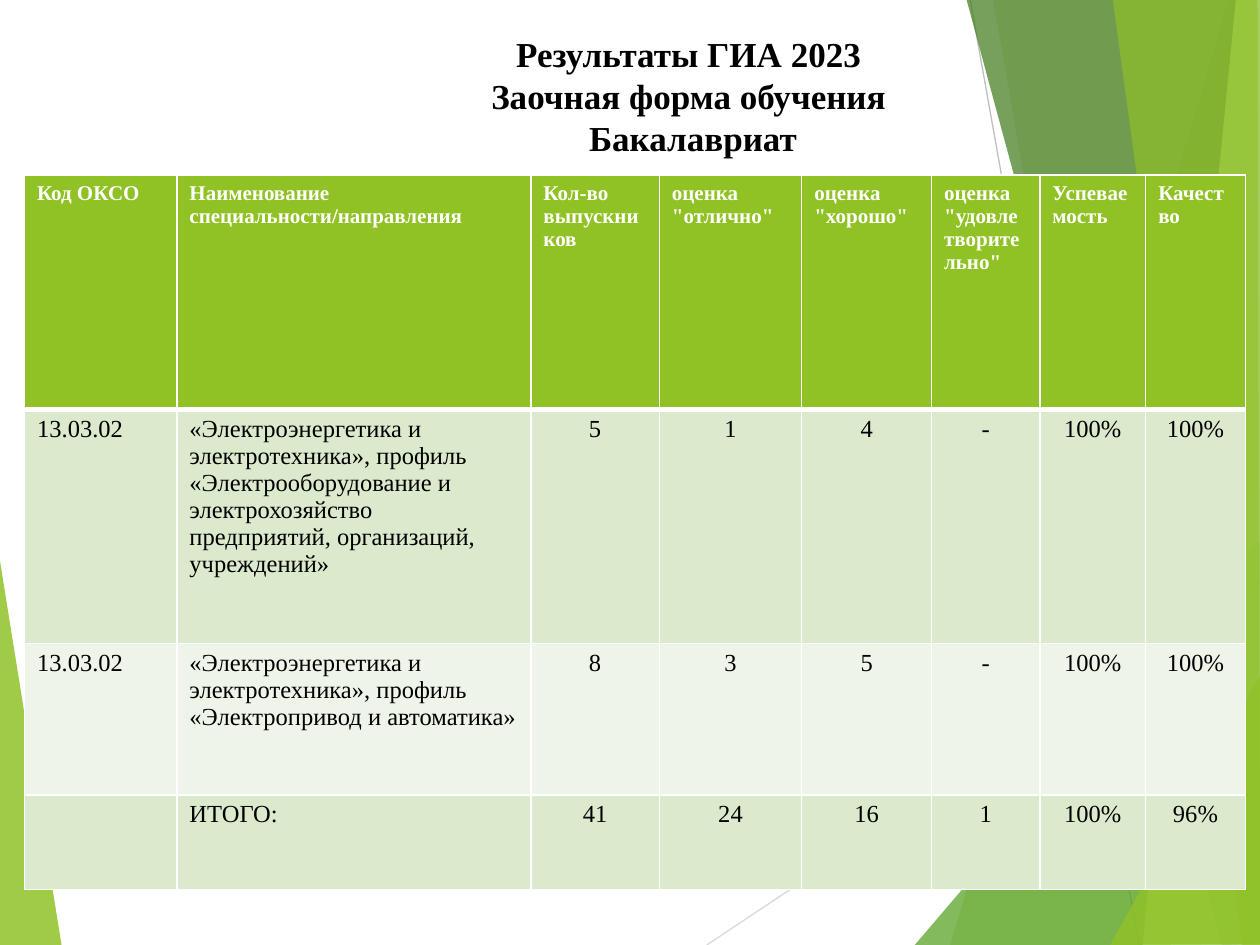
from lxml import etree
from pptx import Presentation, util as u
from pptx.dml.color import RGBColor
from pptx.enum import shapes, text
from pptx.oxml import ns

FONT = "Times New Roman"
GREEN = "90C226"
FACETS = [
    ([(-0.7, 316), (35.3, 540.7), (-0.7, 540)], GREEN, 85),
    ([(702, 0), (543, 540), (721.4, 540.7), (720.7, 0.7)], GREEN, 30),
    ([(567.4, -0.7), (661.7, 540), (720.7, 540), (720.7, -0.7)], GREEN, 20),
    ([(522.7, 540), (720, 308.9), (720.7, 540)], "54A021", 72),
    ([(552.2, -0.7), (698.4, 540), (720.7, 539.3), (720.7, -0.7)], "3F7819", 70),
    ([(706.3, -0.7), (653, 540), (720.7, 540), (720, -0.7)], "C0E474", 70),
    ([(635.8, -0.7), (709.9, 540), (720, 540), (718.6, -0.7)], GREEN, 65),
    ([(634.3, 540), (720.7, 385.2), (720.7, 539.3)], GREEN, 80),
]
RAYS = [((403.9, 540), (720.7, 329), "D9D9D9"), ((554.4, 0), (650.9, 540), "BFBFBF")]
COLUMNS = [87.1, 202.3, 73.4, 81.4, 74.2, 61.9, 60.5, 56.9]
ROWS = [133.9, 133.9, 86.4, 54]
ROW_FILLS = [GREEN, "DBE9CD", "EEF4E8", "DBE9CD"]
RESULTS = [
    ["Код ОКСО", "Наименование специальности/направления", "Кол-во выпускников",
     'оценка "отлично"', 'оценка "хорошо"', 'оценка "удовлетворительно"',
     "Успеваемость", "Качество"],
    ["13.03.02", "«Электроэнергетика и электротехника», профиль «Электрооборудование "
     "и электрохозяйство предприятий, организаций, учреждений»",
     "5", "1", "4", "-", "100%", "100%"],
    ["13.03.02", "«Электроэнергетика и электротехника», профиль «Электропривод и автоматика»",
     "8", "3", "5", "-", "100%", "100%"],
    ["", "ИТОГО:", "41", "24", "16", "1", "100%", "96%"],
]


def rgb(value):
    return RGBColor.from_string(value)


def write(frame, content, size=14, color="000000", bold=False, align=text.PP_ALIGN.LEFT):
    para = frame.paragraphs[0]
    para.text = content
    para.alignment = align
    for font in [para.font] + [span.font for span in para.runs]:
        font.name = FONT
        font.size = u.Pt(size)
        font.bold = bold
        font.color.rgb = rgb(color)


def add_facet(page, points, color, opacity):
    corners = [(u.Pt(x), u.Pt(y)) for x, y in points]
    builder = page.shapes.build_freeform(*corners[0])
    builder.add_line_segments(corners[1:], close=True)
    shape = builder.convert_to_shape()
    shape.shadow.inherit = False
    shape.line.fill.background()
    shape.fill.solid()
    shape.fill.fore_color.rgb = rgb(color)
    tint = shape._element.spPr.find(".//" + ns.qn("a:srgbClr"))
    etree.SubElement(tint, ns.qn("a:alpha"), val=str(opacity * 1000))


def add_ray(page, start, end, color):
    ends = [u.Pt(value) for value in start + end]
    ray = page.shapes.add_connector(shapes.MSO_CONNECTOR.STRAIGHT, *ends)
    ray.line.color.rgb = rgb(color)
    ray.line.width = u.Pt(0.75)
    etree.SubElement(ray._element.spPr, ns.qn("a:effectLst"))


def set_title(page, content):
    title = page.shapes.title
    title.left, title.top, title.width, title.height = map(u.Pt, (72, 15, 648, 101.5))
    frame = title.text_frame
    frame.word_wrap = True
    frame.auto_size = text.MSO_AUTO_SIZE.NONE
    frame.vertical_anchor = text.MSO_ANCHOR.TOP
    write(frame, content, size=20, bold=True, align=text.PP_ALIGN.CENTER)
    page.shapes._spTree.append(title._element)


def set_borders(cell, bottom):
    properties = cell._tc.get_or_add_tcPr()
    widths = {"lnL": 1, "lnR": 1, "lnT": 1, "lnB": bottom}
    for position, (side, width) in enumerate(widths.items()):
        line = etree.Element(ns.qn("a:" + side), w=str(u.Pt(width)))
        fill = etree.SubElement(line, ns.qn("a:solidFill"))
        etree.SubElement(fill, ns.qn("a:srgbClr"), val="FFFFFF")
        properties.insert(position, line)


def add_results(page):
    table = page.shapes.add_table(
        len(ROWS), len(COLUMNS), u.Pt(14), u.Pt(100), u.Pt(sum(COLUMNS)), u.Pt(sum(ROWS))
    ).table
    for column, width in zip(table.columns, COLUMNS):
        column.width = u.Pt(width)
    for number, (row, height) in enumerate(zip(table.rows, ROWS)):
        row.height = u.Pt(height)
        header = number == 0
        for index, cell in enumerate(row.cells):
            cell.fill.solid()
            cell.fill.fore_color.rgb = rgb(ROW_FILLS[number])
            set_borders(cell, 3 if header else 1)
            left = header or index < 2
            write(
                cell.text_frame,
                RESULTS[number][index],
                size=12 if header else 14,
                color="FFFFFF" if header else "000000",
                bold=header,
                align=text.PP_ALIGN.LEFT if left else text.PP_ALIGN.CENTER,
            )


def main():
    deck = Presentation()
    deck.slide_width, deck.slide_height = u.Pt(720), u.Pt(540)
    page = deck.slides.add_slide(deck.slide_layouts[5])
    add_facet(page, *FACETS[0])
    for ray in RAYS:
        add_ray(page, *ray)
    for facet in FACETS[1:]:
        add_facet(page, *facet)
    set_title(page, "Результаты ГИА 2023 \vЗаочная форма обучения \vБакалавриат")
    add_results(page)
    deck.save("out.pptx")


if __name__ == "__main__":
    main()
